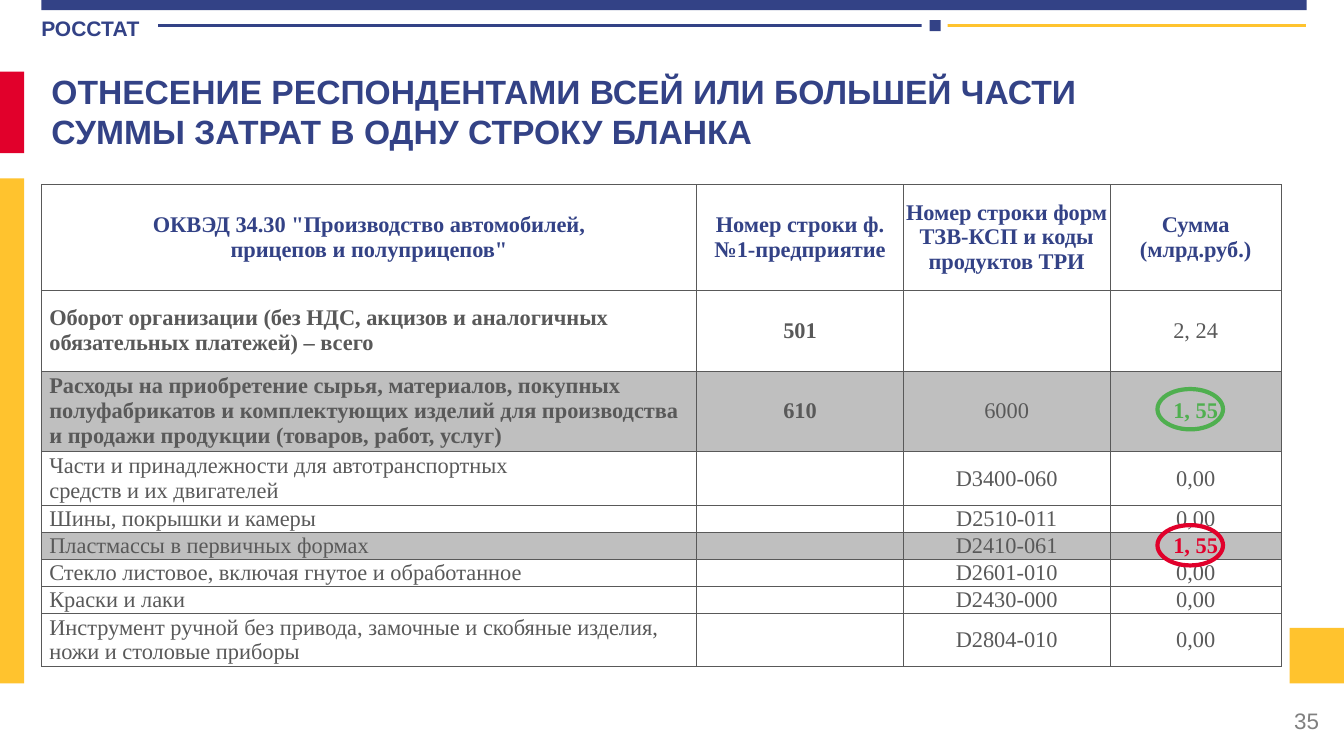
from pptx import Presentation
from pptx.dml.color import RGBColor
from pptx.enum.shapes import MSO_CONNECTOR, MSO_SHAPE
from pptx.enum.text import MSO_ANCHOR, MSO_AUTO_SIZE, PP_ALIGN
from pptx.oxml.xmlchemy import OxmlElement
from pptx.util import Inches, Pt

BLUE = RGBColor(0x33, 0x42, 0x86)
RED = RGBColor(0xE1, 0x00, 0x2B)
YELLOW = RGBColor(0xFF, 0xC3, 0x2E)
GREEN = RGBColor(0x4F, 0xAF, 0x4F)
DARK_GRAY = RGBColor(0x59, 0x59, 0x59)
GRAY = RGBColor(0x80, 0x80, 0x80)
LIGHT_GRAY = RGBColor(0xBF, 0xBF, 0xBF)
WHITE = RGBColor(0xFF, 0xFF, 0xFF)

COLUMN_WIDTHS = [6.5, 2.05, 2.05, 1.7]
ROW_HEIGHTS = [1.05, 0.8, 0.8, 0.48, 0.24, 0.24, 0.24, 0.24, 0.48]
SHADED_ROWS = {2, 5}
BOLD_LABEL_ROWS = {0, 1, 2}
RESULT_COLORS = {2: GREEN, 5: RED}
COST_ROWS = [
    ['ОКВЭД 34.30 "Производство автомобилей,\nприцепов и полуприцепов"',
     "Номер строки ф.№1-предприятие",
     "Номер строки форм ТЗВ-КСП и коды продуктов ТРИ", "Сумма\n(млрд.руб.)"],
    ["Оборот организации (без НДС, акцизов и аналогичных обязательных платежей) – всего",
     "501", "", "2, 24"],
    ["Расходы на приобретение сырья, материалов, покупных полуфабрикатов и комплектующих "
     "изделий для производства и продажи продукции (товаров, работ, услуг)",
     "610", "6000", "1, 55"],
    ["Части и принадлежности для автотранспортных\nсредств и их двигателей",
     "", "D3400-060", "0,00"],
    ["Шины, покрышки и камеры", "", "D2510-011", "0,00"],
    ["Пластмассы в первичных формах", "", "D2410-061", "1, 55"],
    ["Стекло листовое, включая гнутое и обработанное", "", "D2601-010", "0,00"],
    ["Краски и лаки", "", "D2430-000", "0,00"],
    ["Инструмент ручной без привода, замочные и скобяные изделия, ножи и столовые приборы",
     "", "D2804-010", "0,00"],
]


def apply_format(target, values):
    for name, value in values.items():
        setattr(target, name, value)


class SlideBuilder:
    """Holds the fonts and the current slide."""

    heading_font = "Arial"
    table_font = "Times New Roman"

    def __init__(self, slide):
        self.slide = slide

    def fill_text(self, frame, text, font, size, color, bold=False,
                  align=PP_ALIGN.LEFT, frame_format=None):
        apply_format(frame, {"word_wrap": True, **(frame_format or {})})
        frame.text = text
        for paragraph in frame.paragraphs:
            paragraph.alignment = align
            for run in paragraph.runs:
                apply_format(run.font, {"name": font, "size": Pt(size), "bold": bold})
                run.font.color.rgb = color

    def title(self, text, left, top, width, height):
        shape = self.slide.shapes.title
        apply_format(shape, {"left": Inches(left), "top": Inches(top),
                             "width": Inches(width), "height": Inches(height)})
        self.fill_text(shape.text_frame, text, self.heading_font, 24, BLUE, True,
                       frame_format={"vertical_anchor": MSO_ANCHOR.TOP,
                                     "auto_size": MSO_AUTO_SIZE.NONE})

    def text_box(self, text, left, top, width, height, size, color, **options):
        shape = self.slide.shapes.add_textbox(
            Inches(left), Inches(top), Inches(width), Inches(height))
        self.fill_text(shape.text_frame, text, self.heading_font, size, color, **options)

    def shape(self, kind, left, top, width, height, fill=None, line=None):
        shape = self.slide.shapes.add_shape(
            kind, Inches(left), Inches(top), Inches(width), Inches(height))
        shape.shadow.inherit = False
        if fill is None:
            shape.fill.background()
        else:
            shape.fill.solid()
            shape.fill.fore_color.rgb = fill
        if line is None:
            shape.line.fill.background()
        else:
            shape.line.color.rgb = line
            shape.line.width = Pt(3)

    def rule(self, left, right, top, color):
        connector = self.slide.shapes.add_connector(
            MSO_CONNECTOR.STRAIGHT, Inches(left), Inches(top), Inches(right), Inches(top))
        connector.line.color.rgb = color
        connector.line.width = Pt(2)
        connector._element.spPr.append(OxmlElement("a:effectLst"))

    def border(self, cell):
        properties = cell._tc.get_or_add_tcPr()
        for position, side in enumerate(("a:lnL", "a:lnR", "a:lnT", "a:lnB")):
            line = OxmlElement(side)
            line.set("w", str(Pt(0.5)))
            fill = OxmlElement("a:solidFill")
            color = OxmlElement("a:srgbClr")
            color.set("val", str(DARK_GRAY))
            fill.append(color)
            line.append(fill)
            properties.insert(position, line)

    def cell(self, cell, text, color, bold, is_label, fill):
        apply_format(cell, {"margin_left": 0, "margin_right": 0, "margin_top": 0,
                            "margin_bottom": 0, "vertical_anchor": MSO_ANCHOR.MIDDLE})
        align = PP_ALIGN.LEFT if is_label else PP_ALIGN.CENTER
        self.fill_text(cell.text_frame, text, self.table_font, 16, color, bold, align)
        for paragraph in cell.text_frame.paragraphs:
            if is_label:
                paragraph._p.get_or_add_pPr().set("marL", str(Inches(0.08)))
            if not text:
                end = OxmlElement("a:endParaRPr")
                end.set("sz", "1600")
                paragraph._p.append(end)
        if fill is None:
            cell.fill.background()
        else:
            cell.fill.solid()
            cell.fill.fore_color.rgb = fill
        self.border(cell)

    def table(self, left, top):
        table = self.slide.shapes.add_table(
            len(COST_ROWS), len(COLUMN_WIDTHS), Inches(left), Inches(top),
            Inches(sum(COLUMN_WIDTHS)), Inches(sum(ROW_HEIGHTS))).table
        apply_format(table, {"first_row": False, "horz_banding": False})
        for column, width in zip(table.columns, COLUMN_WIDTHS):
            column.width = Inches(width)
        for row, height in zip(table.rows, ROW_HEIGHTS):
            row.height = Inches(height)
        for row_index, texts in enumerate(COST_ROWS):
            for column_index, text in enumerate(texts):
                is_result = column_index == 3 and row_index in RESULT_COLORS
                color = BLUE if row_index == 0 else DARK_GRAY
                if is_result:
                    color = RESULT_COLORS[row_index]
                bold = (row_index == 0 or is_result
                        or (column_index < 2 and row_index in BOLD_LABEL_ROWS))
                self.cell(table.cell(row_index, column_index), text, color, bold,
                          column_index == 0 and row_index > 0,
                          LIGHT_GRAY if row_index in SHADED_ROWS else None)


def main():
    presentation = Presentation()
    presentation.slide_width = Inches(13.33)
    presentation.slide_height = Inches(7.5)
    builder = SlideBuilder(presentation.slides.add_slide(presentation.slide_layouts[5]))

    # Header and side bars
    builder.text_box("РОССТАТ", 0.41, 0.15, 1.13, 0.3, 15, BLUE, bold=True,
                     frame_format={"margin_left": 0, "margin_right": 0,
                                   "margin_top": 0, "margin_bottom": 0})
    builder.shape(MSO_SHAPE.RECTANGLE, 0.41, 0, 12.55, 0.1, BLUE)
    builder.shape(MSO_SHAPE.RECTANGLE, 0, 0.71, 0.24, 0.81, RED)
    builder.shape(MSO_SHAPE.RECTANGLE, 0, 1.77, 0.24, 5.01, YELLOW)
    builder.rule(1.57, 9.33, 0.25, BLUE)
    builder.rule(9.19, 12.95, 0.25, YELLOW)
    builder.shape(MSO_SHAPE.RECTANGLE, 9.14, 0.2, 0.26, 0.11, WHITE)
    builder.shape(MSO_SHAPE.RECTANGLE, 9.22, 0.2, 0.11, 0.11, BLUE)

    # Title and cost table
    builder.title("ОТНЕСЕНИЕ РЕСПОНДЕНТАМИ ВСЕЙ ИЛИ БОЛЬШЕЙ ЧАСТИ "
                  "СУММЫ ЗАТРАТ В ОДНУ СТРОКУ БЛАНКА", 0.41, 0.65, 10.46, 1.2)
    builder.table(0.41, 1.83)

    # Rings around the matching sums
    for top, color in ((5.21, RED), (3.86, GREEN)):
        builder.shape(MSO_SHAPE.OVAL, 11.48, top, 0.65, 0.4, line=color)

    # Page corner and number
    builder.shape(MSO_SHAPE.RECTANGLE, 12.79, 6.23, 0.54, 0.55, YELLOW)
    builder.text_box("35", 10.18, 6.95, 3, 0.4, 16, GRAY, align=PP_ALIGN.RIGHT,
                     frame_format={"vertical_anchor": MSO_ANCHOR.MIDDLE})
    presentation.save("out.pptx")


if __name__ == "__main__":
    main()
